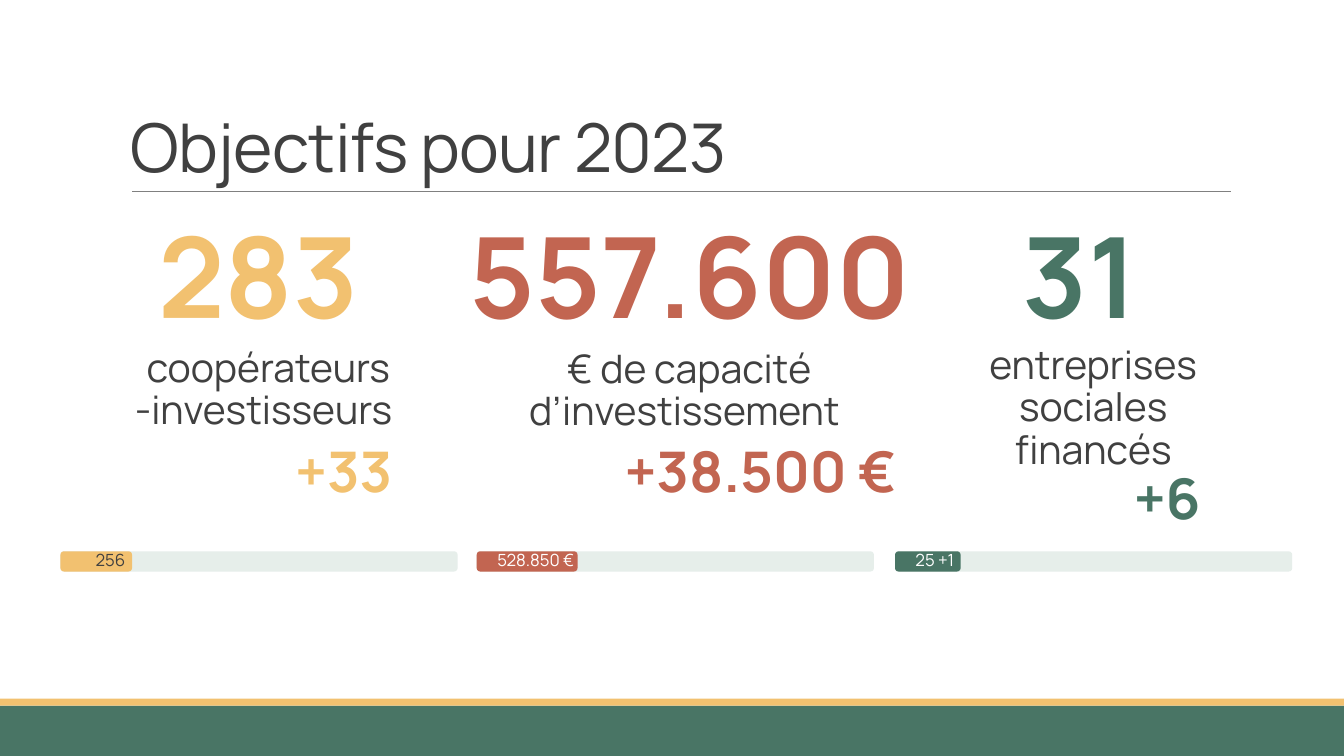
from lxml import etree
from pptx import Presentation
from pptx.dml.color import RGBColor
from pptx.enum.shapes import MSO_CONNECTOR, MSO_SHAPE
from pptx.enum.text import MSO_ANCHOR, PP_ALIGN
from pptx.oxml.ns import qn
from pptx.util import Pt

RECTANGLE = MSO_SHAPE.RECTANGLE
ROUNDED = MSO_SHAPE.ROUNDED_RECTANGLE
STRAIGHT = MSO_CONNECTOR.STRAIGHT
TOP, MIDDLE, BOTTOM = MSO_ANCHOR.TOP, MSO_ANCHOR.MIDDLE, MSO_ANCHOR.BOTTOM
LEFT, CENTER, RIGHT = PP_ALIGN.LEFT, PP_ALIGN.CENTER, PP_ALIGN.RIGHT

COLORS = {
    "text": "404040",
    "white": "FFFFFF",
    "yellow": "F2C170",
    "red": "C26551",
    "green": "497565",
    "track": "E6EEEA",
    "rule": "808080",
}
ROW_HEIGHT = 78.48
VALUE_TOP = 162
BAR_TOP, BAR_WIDTH, BAR_HEIGHT = 393.84, 283.68, 14.4
LABEL_HEIGHT = 28.8

GOALS = [
    {
        "color": "yellow",
        "value": ("283", 89.28, 190.8),
        "caption": ("coopérateurs-investisseurs", 86.4, 227.52, 196.56, 103.68, MIDDLE, True),
        "gain": ("+33", 207.36, 299.52, 72.72),
        "bar": (43.2, 51.12),
        "label": ("256", 43.2, 64.08, "text"),
    },
    {
        "color": "red",
        "value": ("557.600", 330.48, 324.72),
        "caption": ("€ de capacité d’investissement", 356.4, 240.48, 257.76, ROW_HEIGHT, MIDDLE, True),
        "gain": ("+38.500 €", 443.52, 299.52, 196.56),
        "bar": (340.56, 72),
        "label": ("528.850 €", 347.04, 64.08, "white"),
    },
    {
        "color": "green",
        "value": ("31", 676.08, 190.8),
        "caption": ("entreprises sociales financés", 685.44, 243.36, 190.8, ROW_HEIGHT, TOP, False),
        "gain": ("+6", 795.6, 318.96, 61.92),
        "bar": (639.36, 46.8),
        "label": ("25 +1", 639.36, 49.68, "white"),
    },
]


class SlideBuilder:
    """Draws styled elements on the current slide."""

    font = "Manrope"

    def __init__(self, slide):
        self.slide = slide

    def color(self, name):
        return RGBColor.from_string(COLORS[name])

    def box(self, left, top, width, height, fill, kind=RECTANGLE, shapes=None):
        shapes = shapes or self.slide.shapes
        shape = shapes.add_shape(kind, Pt(left), Pt(top), Pt(width), Pt(height))
        shape.shadow.inherit = False
        shape.fill.solid()
        shape.fill.fore_color.rgb = self.color(fill)
        shape.line.fill.background()

    def rule(self, left, right, top):
        line = self.slide.shapes.add_connector(STRAIGHT, Pt(left), Pt(top), Pt(right), Pt(top))
        line.line.color.rgb = self.color("rule")
        line.line.width = Pt(0.5)
        etree.SubElement(line._element.spPr, qn("a:effectLst"))

    def text(self, content, left, top, width, height, size, color, bold=False,
             align=CENTER, anchor=MIDDLE, bullet=False, margin=0, spacing=0.9,
             before=12, after=2, tracking=None, shapes=None):
        shapes = shapes or self.slide.shapes
        shape = shapes.add_textbox(Pt(left), Pt(top), Pt(width), Pt(height))
        frame = shape.text_frame
        frame.word_wrap = True
        frame.vertical_anchor = anchor
        frame.margin_left = frame.margin_right = Pt(margin)
        frame.margin_top = frame.margin_bottom = Pt(3.6)
        paragraph = frame.paragraphs[0]
        paragraph.alignment = align
        paragraph.line_spacing = spacing
        paragraph.space_before = Pt(before)
        paragraph.space_after = Pt(after)
        if bullet:
            self.blank_bullet(paragraph)
        run = paragraph.add_run()
        run.text = content
        run.font.name = self.font
        run.font.size = Pt(size)
        run.font.bold = bold
        run.font.color.rgb = self.color(color)
        if tracking is not None:
            run._r.get_or_add_rPr().set("spc", str(tracking))

    def blank_bullet(self, paragraph):
        properties = paragraph._p.get_or_add_pPr()
        properties.set("marL", str(Pt(7.2)))
        properties.set("indent", str(Pt(-7.2)))
        bullet_color = etree.SubElement(properties, qn("a:buClr"))
        etree.SubElement(bullet_color, qn("a:srgbClr"), val=COLORS["yellow"])
        etree.SubElement(properties, qn("a:buChar"), char=" ")

    def progress(self, bar, label, fill):
        left, done = bar
        content, label_left, label_width, label_color = label
        shapes = self.slide.shapes.add_group_shape().shapes
        for width, color in ((BAR_WIDTH, "track"), (done, fill)):
            self.box(left, BAR_TOP, width, BAR_HEIGHT, color, ROUNDED, shapes)
        label_top = BAR_TOP + (BAR_HEIGHT - LABEL_HEIGHT) / 2
        self.text(content, label_left, label_top, label_width, LABEL_HEIGHT, 12,
                  label_color, bullet=True, shapes=shapes)

    def goal(self, goal):
        color = goal["color"]
        value, left, width = goal["value"]
        self.text(value, left, VALUE_TOP, width, ROW_HEIGHT, 80, color, bold=True)
        caption, left, top, width, height, anchor, bullet = goal["caption"]
        self.text(caption, left, top, width, height, 28, "text", anchor=anchor, bullet=bullet)
        gain, left, top, width = goal["gain"]
        self.text(gain, left, top, width, ROW_HEIGHT, 40, color, bold=True, align=RIGHT)
        self.progress(goal["bar"], goal["label"], color)


def main():
    presentation = Presentation()
    presentation.slide_width = Pt(960)
    presentation.slide_height = Pt(540)
    builder = SlideBuilder(presentation.slides.add_slide(presentation.slide_layouts[6]))
    builder.box(0, 504, 960, 36, "green")
    builder.box(0, 499, 960, 5, "yellow")
    builder.rule(94.32, 879.12, 136.8)
    builder.text("Objectifs pour 2023", 86.4, 22.32, 792, 114.48, 48, "text", align=LEFT,
                 anchor=BOTTOM, margin=7.2, spacing=0.85, before=0, after=0, tracking=-50)
    for goal in GOALS:
        builder.goal(goal)
    presentation.save("out.pptx")


if __name__ == "__main__":
    main()
